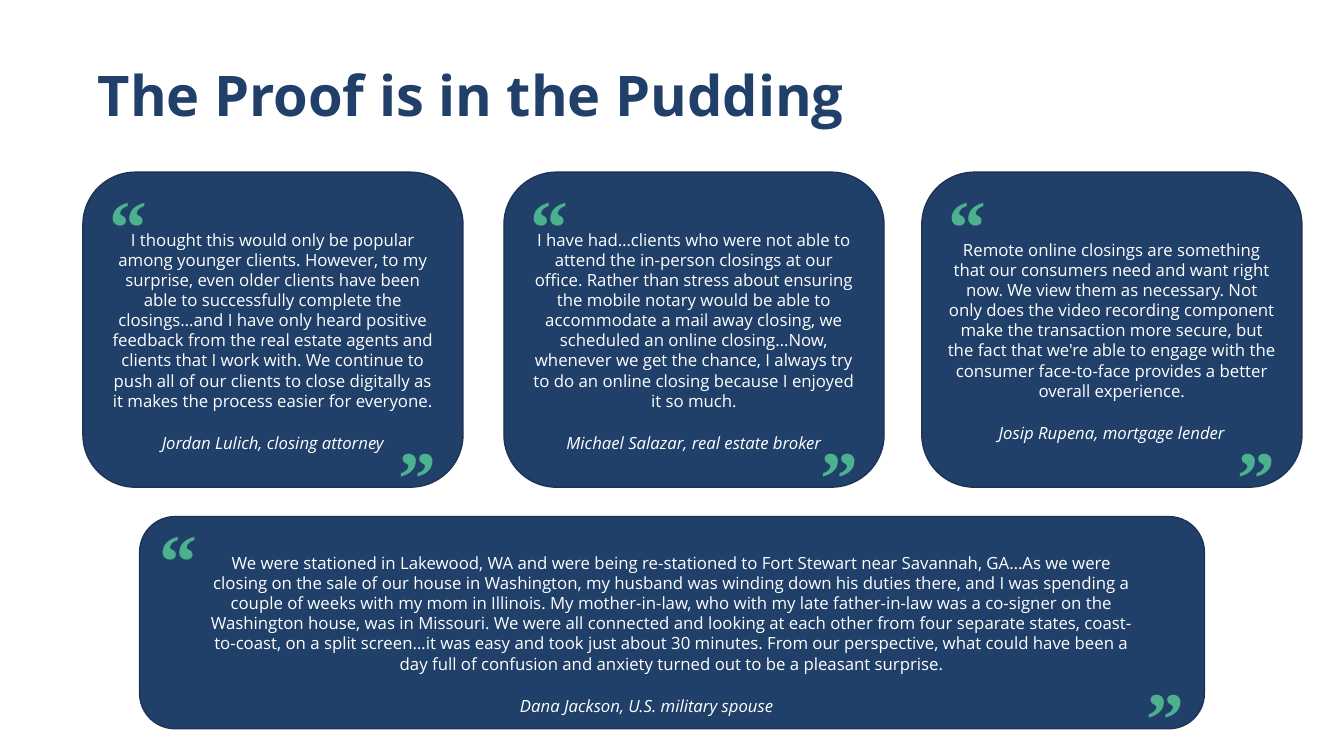
from pptx import Presentation, util as u
from pptx.dml.color import RGBColor
from pptx.enum import shapes, text

PX = 9525  # 96 px to the inch
THEME = {
    "navy": RGBColor.from_string("204069"),
    "edge": RGBColor.from_string("1E3256"),
    "green": RGBColor.from_string("4CB18E"),
    "white": RGBColor.from_string("FFFFFF"),
    "sans": "Open Sans", "serif": "Times New Roman",
    "title": 40, "body": 12, "mark": 54,
}
LINE = 22  # height of one body line in px

deck = Presentation()
deck.slide_width, deck.slide_height = 1280 * PX, 720 * PX
slide = deck.slides.add_slide(deck.slide_layouts[6])


def setup(shape, anchor, left, top, right, bottom):
    frame = shape.text_frame
    form = {"word_wrap": True, "vertical_anchor": anchor,
            "margin_left": left * PX, "margin_top": top * PX,
            "margin_right": right * PX, "margin_bottom": bottom * PX}
    for key, val in form.items():
        setattr(frame, key, val)
    return frame


def write(para, words, face, size, color, align="LEFT", **more):
    para.alignment = text.PP_ALIGN[align]
    run = para.add_run()
    run.text = words
    run.font.color.rgb = THEME[color]
    form = {"name": THEME[face], "size": u.Pt(THEME[size]), **more}
    for key, val in form.items():
        setattr(run.font, key, val)


# Title
box = slide.shapes.add_textbox(*(n * PX for n in (93, 42, 966, 104)))
frame = setup(box, text.MSO_ANCHOR.BOTTOM, 0, 0, 0, 24)
write(frame.paragraphs[0], "The Proof is in the Pudding",
      "sans", "title", "navy", bold=True)

# Quotes: card box, marks box, gap between marks in pt, right margin, indent
TOP, WIDE, HIGH = 164, 362, 300
SMALL = [((x, TOP, WIDE, HIGH), (x + 15, TOP, WIDE - 30, 339), 115, 10, 0)
         for x in (79, 480, 878)]
LARGE = ((133, 492, 1014, 202), (142, 483, 996, 235), 48, 58, 48)
QUOTES = [
    ("I thought this would only be popular among younger clients. However, "
     "to my surprise, even older clients have been able to successfully "
     "complete the closings…and I have only heard positive feedback from the "
     "real estate agents and clients that I work with. We continue to push "
     "all of our clients to close digitally as it makes the process easier "
     "for everyone.",
     "Jordan Lulich, closing attorney"),
    ("I have had…clients who were not able to attend the in-person closings "
     "at our office. Rather than stress about ensuring the mobile notary "
     "would be able to accommodate a mail away closing, we scheduled an "
     "online closing…Now, whenever we get the chance, I always try to do an "
     "online closing because I enjoyed it so much.",
     "Michael Salazar, real estate broker"),
    ("Remote online closings are something that our consumers need and want "
     "right now. We view them as necessary. Not only does the video "
     "recording component make the transaction more secure, but the fact "
     "that we're able to engage with the consumer face-to-face provides a "
     "better overall experience.",
     "Josip Rupena, mortgage lender"),
    ("We were stationed in Lakewood, WA and were being re-stationed to Fort "
     "Stewart near Savannah, GA…As we were closing on the sale of our house "
     "in Washington, my husband was winding down his duties there, and I was "
     "spending a couple of weeks with my mom in Illinois. My mother-in-law, "
     "who with my late father-in-law was a co-signer on the Washington "
     "house, was in Missouri. We were all connected and looking at each "
     "other from four separate states, coast-to-coast, on a split screen…it "
     "was easy and took just about 30 minutes. From our perspective, what "
     "could have been a day full of confusion and anxiety turned out to be a "
     "pleasant surprise.",
     "Dana Jackson, U.S. military spouse"),
]

for (quote, name), (area, marks, gap, right, indent) in zip(
        QUOTES, SMALL + [LARGE]):
    # Card with quote and speaker
    card = slide.shapes.add_shape(shapes.MSO_SHAPE.ROUNDED_RECTANGLE,
                                  *(n * PX for n in area))
    card.shadow.inherit = False
    card.fill.solid()
    card.fill.fore_color.rgb = THEME["navy"]
    card.line.color.rgb = THEME["edge"]
    card.line.width = u.Pt(1)
    frame = setup(card, text.MSO_ANCHOR.MIDDLE, 10, 5 + LINE, right, 5)
    first = frame.paragraphs[0]
    write(first, quote, "sans", "body", "white", "CENTER")
    first._p.get_or_add_pPr().set("marL", str(indent * PX))
    last = frame.add_paragraph()
    last.space_before = u.Pt(16)
    write(last, name, "sans", "body", "white", "CENTER", italic=True)

    # Opening and closing marks
    box = slide.shapes.add_textbox(*(n * PX for n in marks))
    frame = setup(box, text.MSO_ANCHOR.TOP, 10, 5, 10, 5)
    write(frame.paragraphs[0], "“", "serif", "mark", "green", bold=True)
    last = frame.add_paragraph()
    last.space_before = u.Pt(gap)
    write(last, "”", "serif", "mark", "green", "RIGHT", bold=True)

deck.save("out.pptx")
